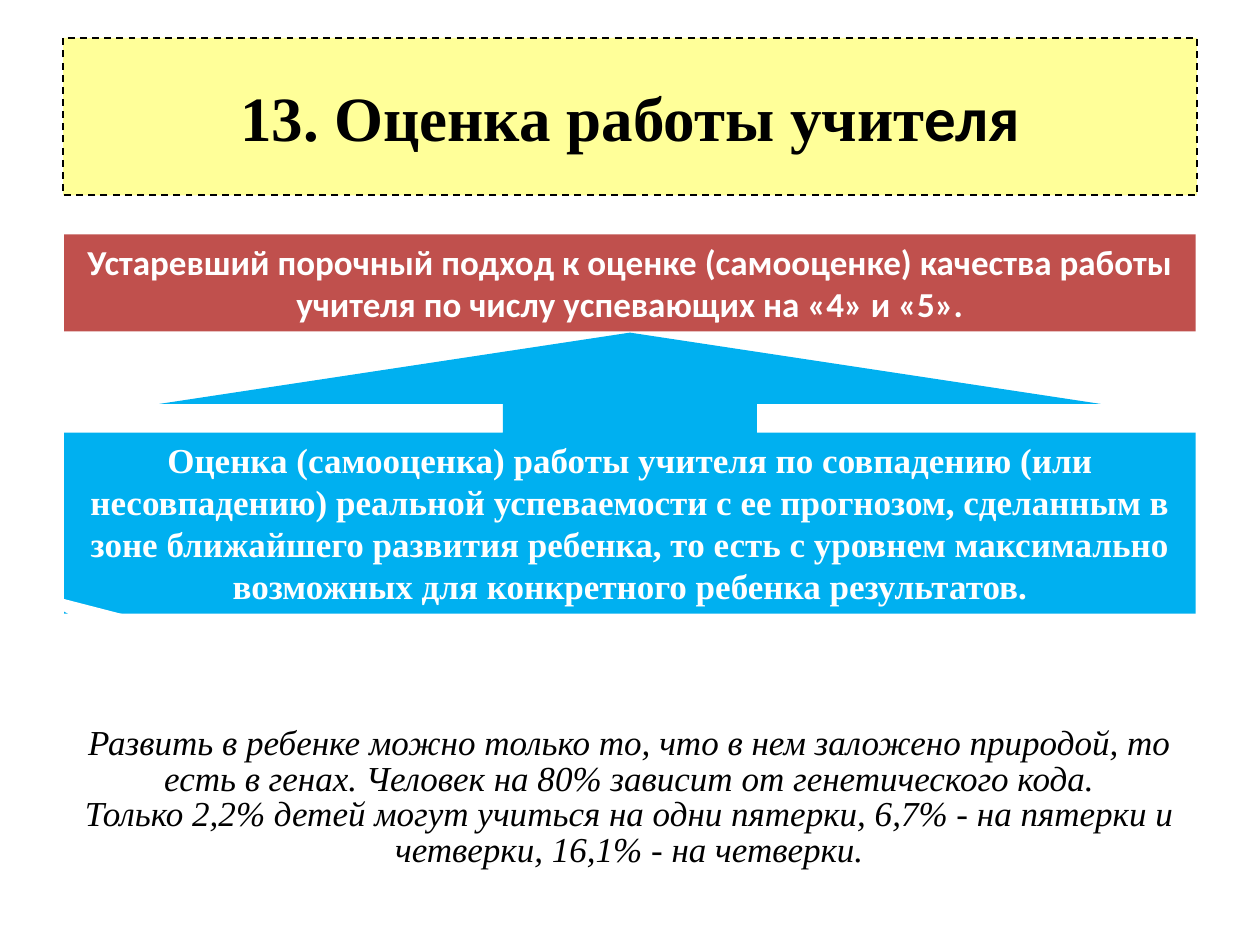
from pptx import Presentation
from pptx import util as u
from pptx.dml.color import RGBColor
from pptx.enum import dml, shapes, text

COLORS = {"ink": "000000", "paper": "FFFFFF", "title": "FFFF99",
          "outdated": "C0504D", "proposed": "00B0F0"}
SERIF, SANS = "Times New Roman", "Calibri"


def color(name):
    """Return the named palette colour."""
    return RGBColor.from_string(COLORS[name])


def fill_shape(shape, name):
    """Give a shape a plain fill."""
    shape.fill.solid()
    shape.fill.fore_color.rgb = color(name)


def add_span(para, wording, face, size, ink, bold=False, italic=False):
    """Add one formatted run to a paragraph."""
    span = para.add_run()
    span.text = wording
    font = span.font
    font.name, font.size = face, u.Pt(size)
    font.bold, font.italic = bold, italic
    font.color.rgb = color(ink)


def place_title(page, box):
    """Place the dashed title whose last letters are in another face."""
    title = page.shapes.title
    title.left, title.top, title.width, title.height = map(u.Inches, box)
    fill_shape(title, "title")
    title.line.color.rgb = color("ink")
    title.line.width = u.Pt(1)
    title.line.dash_style = dml.MSO_LINE.DASH
    frame = title.text_frame
    frame.auto_size = text.MSO_AUTO_SIZE.NONE
    frame.vertical_anchor = text.MSO_ANCHOR.MIDDLE
    para = frame.paragraphs[0]
    para.alignment = text.PP_ALIGN.CENTER
    add_span(para, "13. Оценка работы учит", SERIF, 36, "ink", bold=True)
    add_span(para, "еля", SANS, 36, "ink", bold=True)


def place_panel(page, box, kind, fill, wordings, face, ink,
                adjustments=(), spacing=None, **style):
    """Place a filled shape with centred paragraphs."""
    panel = page.shapes.add_shape(kind, *map(u.Inches, box))
    for index, value in enumerate(adjustments):
        panel.adjustments[index] = value
    panel.shadow.inherit = False
    fill_shape(panel, fill)
    panel.line.fill.background()
    frame = panel.text_frame
    frame.word_wrap = True
    frame.auto_size = text.MSO_AUTO_SIZE.SHAPE_TO_FIT_TEXT
    frame.vertical_anchor = text.MSO_ANCHOR.TOP
    for index, wording in enumerate(wordings):
        para = frame.add_paragraph() if index else frame.paragraphs[0]
        para.alignment = text.PP_ALIGN.CENTER
        para.line_spacing = spacing
        add_span(para, wording, face, 20, ink, **style)


def main():
    """Build the slide and save the deck."""
    deck = Presentation()
    deck.slide_width, deck.slide_height = u.Inches(10), u.Inches(7.5)
    page = deck.slides.add_slide(deck.slide_layouts.get_by_name("Title Only"))
    place_title(page, (0.5, 0.3, 9, 1.25))
    kinds = shapes.MSO_SHAPE
    place_panel(
        page, (0.51, 2.64, 8.98, 2.23), kinds.UP_ARROW_CALLOUT, "proposed",
        ["Оценка (самооценка) работы учителя по совпадению (или несовпадению) "
         "реальной успеваемости с ее прогнозом, сделанным в зоне ближайшего "
         "развития ребенка, то есть с уровнем максимально возможных для "
         "конкретного ребенка результатов."],
        SERIF, "paper", adjustments=(0.904, 1.676, 0.254, 0.644), bold=True)
    place_panel(
        page, (0.51, 1.86, 8.98, 0.77), kinds.RECTANGLE, "outdated",
        ["Устаревший порочный подход к оценке (самооценке) качества работы "
         "учителя по числу успевающих на «4» и «5»."],
        SANS, "paper", bold=True)
    place_panel(
        page, (0.5, 5.72, 8.99, 1.25), kinds.RECTANGULAR_CALLOUT, "paper",
        ["Развить в ребенке можно только то, что в нем заложено природой, то "
         "есть в генах. Человек на 80% зависит от генетического кода.",
         "Только 2,2% детей могут учиться на одни пятерки, 6,7% - на пятерки и "
         "четверки, 16,1% - на четверки."],
        SERIF, "ink", adjustments=(-0.533, -1.336), spacing=0.85, italic=True)
    deck.save("out.pptx")


if __name__ == "__main__":
    main()
